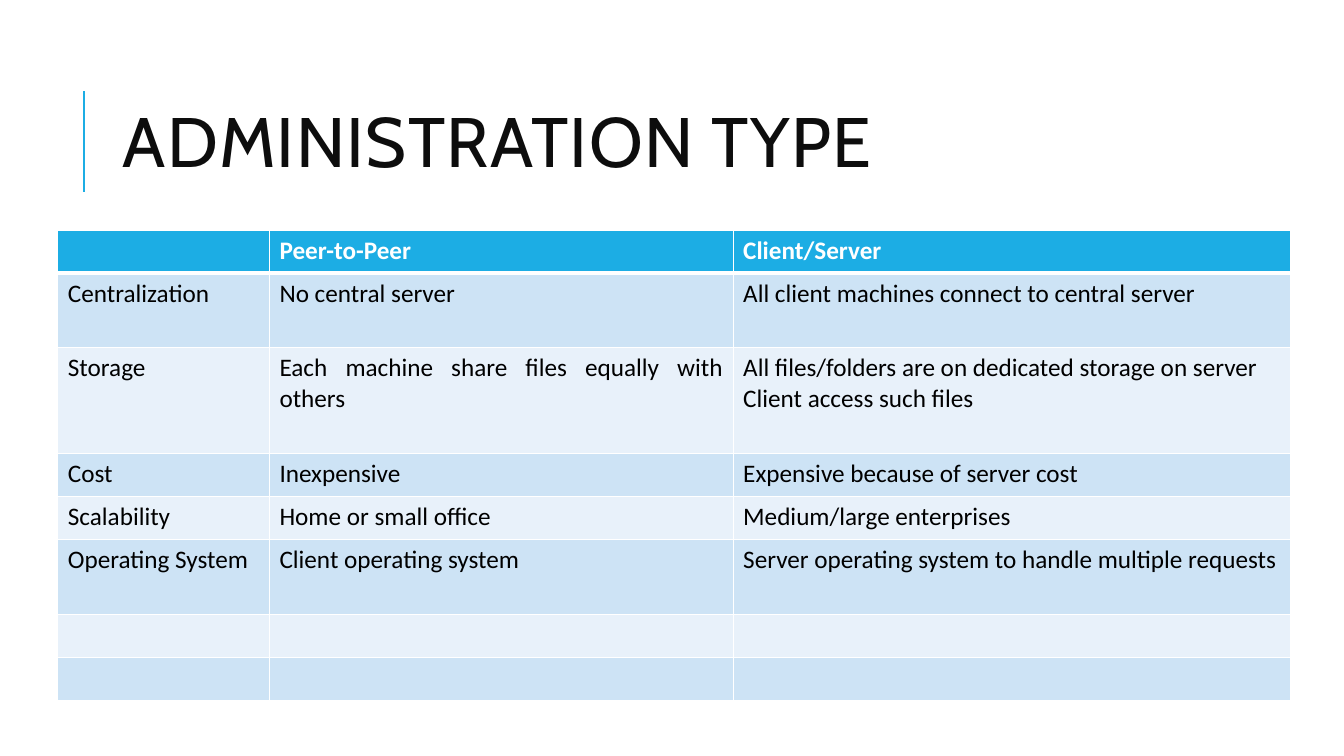
from lxml import etree
from pptx import Presentation
from pptx.dml.color import RGBColor
from pptx.enum.shapes import MSO_CONNECTOR
from pptx.enum.text import MSO_ANCHOR, PP_ALIGN
from pptx.oxml.ns import qn
from pptx.util import Pt

STRAIGHT = MSO_CONNECTOR.STRAIGHT
MIDDLE = MSO_ANCHOR.MIDDLE
LEFT, JUSTIFY = PP_ALIGN.LEFT, PP_ALIGN.JUSTIFY

# Content: a line break in a cell starts a new paragraph
TITLE = "ADMINISTRATION TYPE"
COMPARISON = [
    ("", "Peer-to-Peer", "Client/Server"),
    ("Centralization", "No central server",
     "All client machines connect to central server"),
    ("Storage", "Each machine share files equally with others",
     "All files/folders are on dedicated storage on server\nClient access such files"),
    ("Cost", "Inexpensive", "Expensive because of server cost"),
    ("Scalability", "Home or small office", "Medium/large enterprises"),
    ("Operating System", "Client operating system",
     "Server operating system to handle multiple requests"),
    ("", "", ""),
    ("", "", ""),
]
JUSTIFIED_CELL = (2, 1)

THEME = {
    "accent": "1CADE4", "title": "0D0D0D", "text": "000000", "white": "FFFFFF",
    "bands": ("E8F1FA", "CDE3F5"),
    "title_font": "Cabin", "body_font": "Calibri",
    "title_size": 50, "body_size": 18,
}

# Layout in points
SLIDE_SIZE = (960, 540)
TITLE_BOX = (80.64, 46.08, 765.36, 118.08)
RULE_X, RULE_TOP, RULE_BOTTOM = 60, 65, 137
TABLE_LEFT, TABLE_TOP = 41.3, 164.4
COLUMN_WIDTHS = (151.2, 331.2, 398.2)
SHORT, MEDIUM, TALL = 30.7, 53.4, 75.6
ROW_HEIGHTS = (SHORT, MEDIUM, TALL, SHORT, SHORT, MEDIUM, SHORT, SHORT)
BORDER, HEADER_BORDER = 1, 3


def color(name):
    return RGBColor.from_string(THEME.get(name, name))


def style_font(paragraph, face, size, ink, bold=False):
    font = paragraph.font
    font.name, font.size, font.bold = THEME[face], Pt(THEME[size]), bold
    font.color.rgb = color(ink)


def set_borders(cell, top, bottom):
    properties = cell._tc.get_or_add_tcPr()
    edges = (("L", BORDER), ("R", BORDER), ("T", top), ("B", bottom))
    for position, (edge, width) in enumerate(edges):
        line = etree.Element(qn(f"a:ln{edge}"), w=str(Pt(width)))
        fill = etree.SubElement(line, qn("a:solidFill"))
        etree.SubElement(fill, qn("a:srgbClr"), val=THEME["white"])
        properties.insert(position, line)


def add_title(slide):
    # Accent rule
    rule = slide.shapes.add_connector(
        STRAIGHT, Pt(RULE_X), Pt(RULE_BOTTOM), Pt(RULE_X), Pt(RULE_TOP))
    rule.line.color.rgb = color("accent")
    rule.line.width = Pt(1.5)
    etree.SubElement(rule._element.spPr, qn("a:effectLst"))

    # Heading
    frame = slide.shapes.add_textbox(*map(Pt, TITLE_BOX)).text_frame
    frame.word_wrap = True
    frame.vertical_anchor = MIDDLE
    heading = frame.paragraphs[0]
    heading.line_spacing = 0.8
    run = heading.add_run()
    run.text = TITLE
    run._r.get_or_add_rPr().set("spc", "100")
    style_font(heading, "title_font", "title_size", "title")


def add_comparison(slide):
    table = slide.shapes.add_table(
        len(COMPARISON), len(COLUMN_WIDTHS), Pt(TABLE_LEFT), Pt(TABLE_TOP),
        Pt(sum(COLUMN_WIDTHS)), Pt(sum(ROW_HEIGHTS))).table
    for column, width in zip(table.columns, COLUMN_WIDTHS):
        column.width = Pt(width)
    for row, height in zip(table.rows, ROW_HEIGHTS):
        row.height = Pt(height)

    for r, entries in enumerate(COMPARISON):
        header = r == 0
        for c, entry in enumerate(entries):
            cell = table.cell(r, c)
            cell.fill.solid()
            cell.fill.fore_color.rgb = color("accent" if header else THEME["bands"][r % 2])
            set_borders(cell, HEADER_BORDER if r == 1 else BORDER,
                        HEADER_BORDER if header else BORDER)
            if not entry:
                continue
            cell.text = entry
            for paragraph in cell.text_frame.paragraphs:
                paragraph.alignment = JUSTIFY if (r, c) == JUSTIFIED_CELL else LEFT
                style_font(paragraph, "body_font", "body_size",
                           "white" if header else "text", header)


def main():
    deck = Presentation()
    deck.slide_width, deck.slide_height = map(Pt, SLIDE_SIZE)
    slide = deck.slides.add_slide(deck.slide_layouts[6])
    add_title(slide)
    add_comparison(slide)
    deck.save("out.pptx")


if __name__ == "__main__":
    main()
